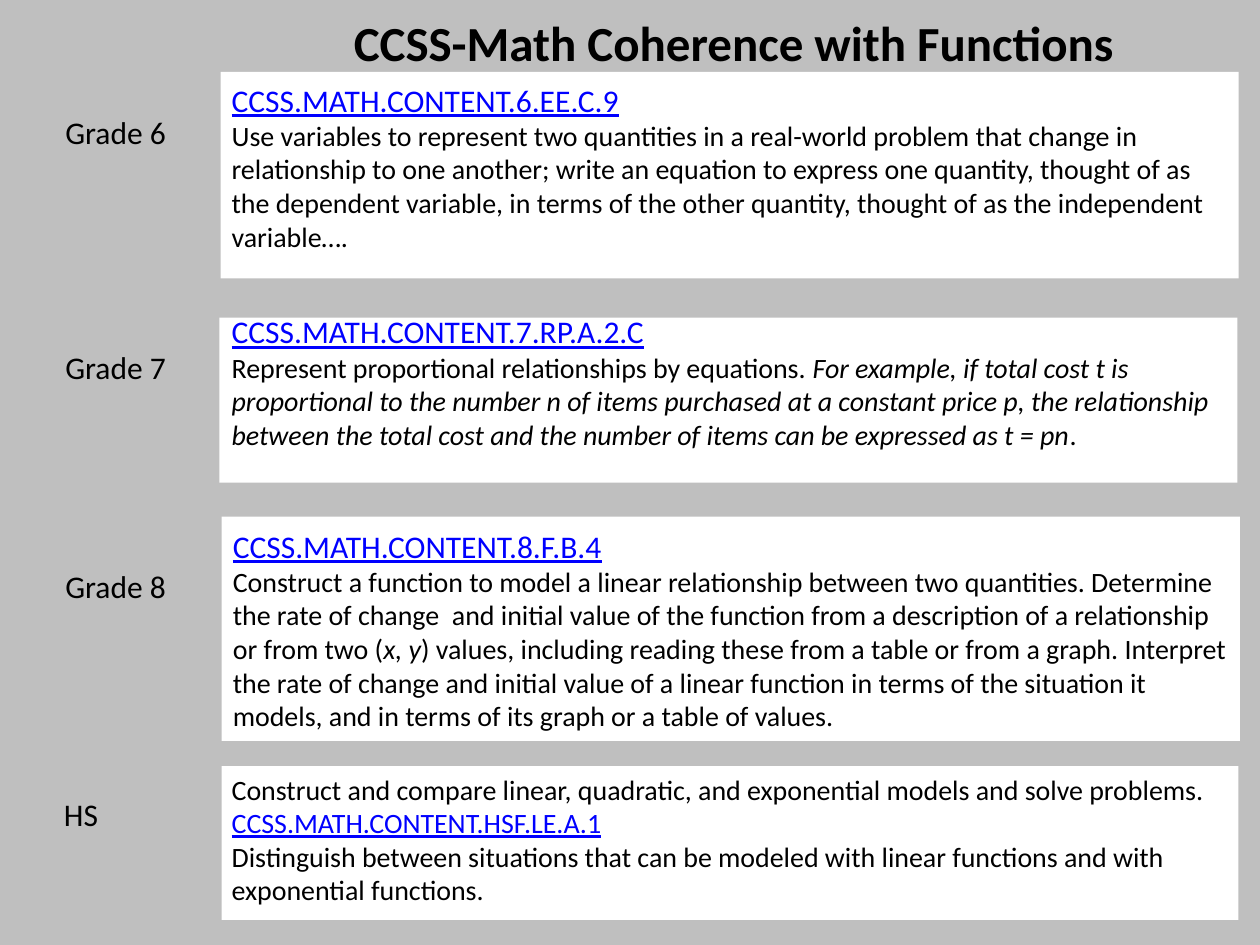
"""Build a slide that traces the function standards from Grade 6 to high school."""
from collections import namedtuple
from dataclasses import dataclass

from pptx import Presentation
from pptx import util as u
from pptx.dml.color import RGBColor
from pptx.enum import shapes, text

COLUMNS, ROWS = 100, 75
CELL = u.Inches(0.1)

Span = namedtuple("Span", "words style")
Band = namedtuple("Band", "grade label panel body paras")


@dataclass(frozen=True)
class Theme:
    """Hold the colours, type sizes and font of the slide."""
    font: str = "Calibri"
    ground: str = "BFBFBF"
    panel: str = "FFFFFF"
    ink: str = "000000"
    link: str = "0000FF"
    title: int = 28
    label: int = 18
    body: int = 16
    gap: int = 10


THEME = Theme()
STYLES = {
    "title": dict(size=THEME.title, bold=True),
    "label": dict(size=THEME.label),
    "code": dict(size=THEME.label, color=THEME.link, underline=True),
    "small code": dict(size=THEME.body, color=THEME.link, underline=True),
    "body": dict(size=THEME.body),
    "example": dict(size=THEME.body, italic=True),
}

BANDS = [
    Band("Grade 6", (4.2, 8.5), (17.5, 5.7, 80.8, 16.4), (17.4, 5.9, 80.8, 14.8), [
        [Span("CCSS.MATH.CONTENT.6.EE.C.9", "code")],
        [Span("Use variables to represent two quantities in a real-world problem that "
              "change in relationship to one another; write an equation to express one "
              "quantity, thought of as the dependent variable, in terms of the other "
              "quantity, thought of as the independent variable….", "body")],
    ]),
    Band("Grade 7", (4.2, 27.1), (17.4, 25.2, 80.8, 13.1), (17.4, 24.3, 80.8, 12.1), [
        [Span("CCSS.MATH.CONTENT.7.RP.A.2.C", "code")],
        [Span("Represent proportional relationships by equations. ", "body"),
         Span("For example, if total cost t is proportional to the number n of items "
              "purchased at a constant price p, the relationship between the total cost "
              "and the number of items can be expressed as t = pn", "example"),
         Span(".", "body")],
    ]),
    Band("Grade 8", (4.2, 44.5), (17.6, 41, 80.8, 17.8), (17.5, 41.3, 81.4, 17.5), [
        [Span("CCSS.MATH.CONTENT.8.F.B.4", "code")],
        [Span("Construct a function to model a linear relationship between two "
              "quantities. Determine the rate of change  and initial value of the "
              "function from a description of a relationship or from two (", "body"),
         Span("x, y", "example"),
         Span(") values, including reading these from a table or from a graph. Interpret "
              "the rate of change and initial value of a linear function in terms of the "
              "situation it models, and in terms of its graph or a table of values.",
              "body")],
    ]),
    Band("HS", (4.1, 62.6), (17.6, 60.8, 80.7, 12.2), (17.4, 60.8, 80.8, 11.8), [
        [Span("Construct and compare linear, quadratic, and exponential models and "
              "solve problems.", "body")],
        [Span("CCSS.MATH.CONTENT.HSF.LE.A.1", "small code")],
        [Span("Distinguish between situations that can be modeled with linear functions "
              "and with exponential functions.", "body")],
    ]),
]


def place(area):
    """Turn grid columns and rows into slide lengths."""
    return [round(cells * CELL) for cells in area]


def paint(fill, color):
    """Give a fill one solid colour."""
    fill.solid()
    fill.fore_color.rgb = RGBColor.from_string(color)


def add_span(para, span):
    """Add one styled run to a paragraph."""
    run = para.add_run()
    run.text = span.words
    style = STYLES[span.style]
    font = run.font
    font.name = THEME.font
    font.size = u.Pt(style["size"])
    font.bold = style.get("bold", False)
    font.italic = style.get("italic", False)
    font.underline = style.get("underline", False)
    font.color.rgb = RGBColor.from_string(style.get("color", THEME.ink))


def add_panel(page, area):
    """Add a plain white panel."""
    panel = page.shapes.add_shape(shapes.MSO_SHAPE.RECTANGLE, *place(area))
    panel.shadow.inherit = False
    paint(panel.fill, THEME.panel)
    panel.line.fill.background()


def add_text(page, area, paras, gap=0, grow=False):
    """Add a wrapped text box made of styled paragraphs."""
    box = page.shapes.add_textbox(*place(area))
    frame = box.text_frame
    frame.word_wrap = True
    if grow:
        frame.auto_size = text.MSO_AUTO_SIZE.SHAPE_TO_FIT_TEXT
    for index, spans in enumerate(paras):
        para = frame.add_paragraph() if index else frame.paragraphs[0]
        para.space_after = u.Pt(gap)
        for span in spans:
            add_span(para, span)


def add_heading(page, area, words, style):
    """Add a single line of title or label text."""
    add_text(page, area, [[Span(words, style)]], gap=THEME.gap)


def main():
    """Build and save the deck."""
    deck = Presentation()
    deck.slide_width, deck.slide_height = COLUMNS * CELL, ROWS * CELL
    page = deck.slides.add_slide(deck.slide_layouts[6])
    paint(page.background.fill, THEME.ground)
    add_heading(page, (27.1, 0.5, 68.7, 5.3), "CCSS-Math Coherence with Functions", "title")
    for band in BANDS:
        add_panel(page, band.panel)
        add_heading(page, (*band.label, 30, 5.3), band.grade, "label")
        add_text(page, band.body, band.paras, grow=True)
    deck.save("out.pptx")


if __name__ == "__main__":
    main()
